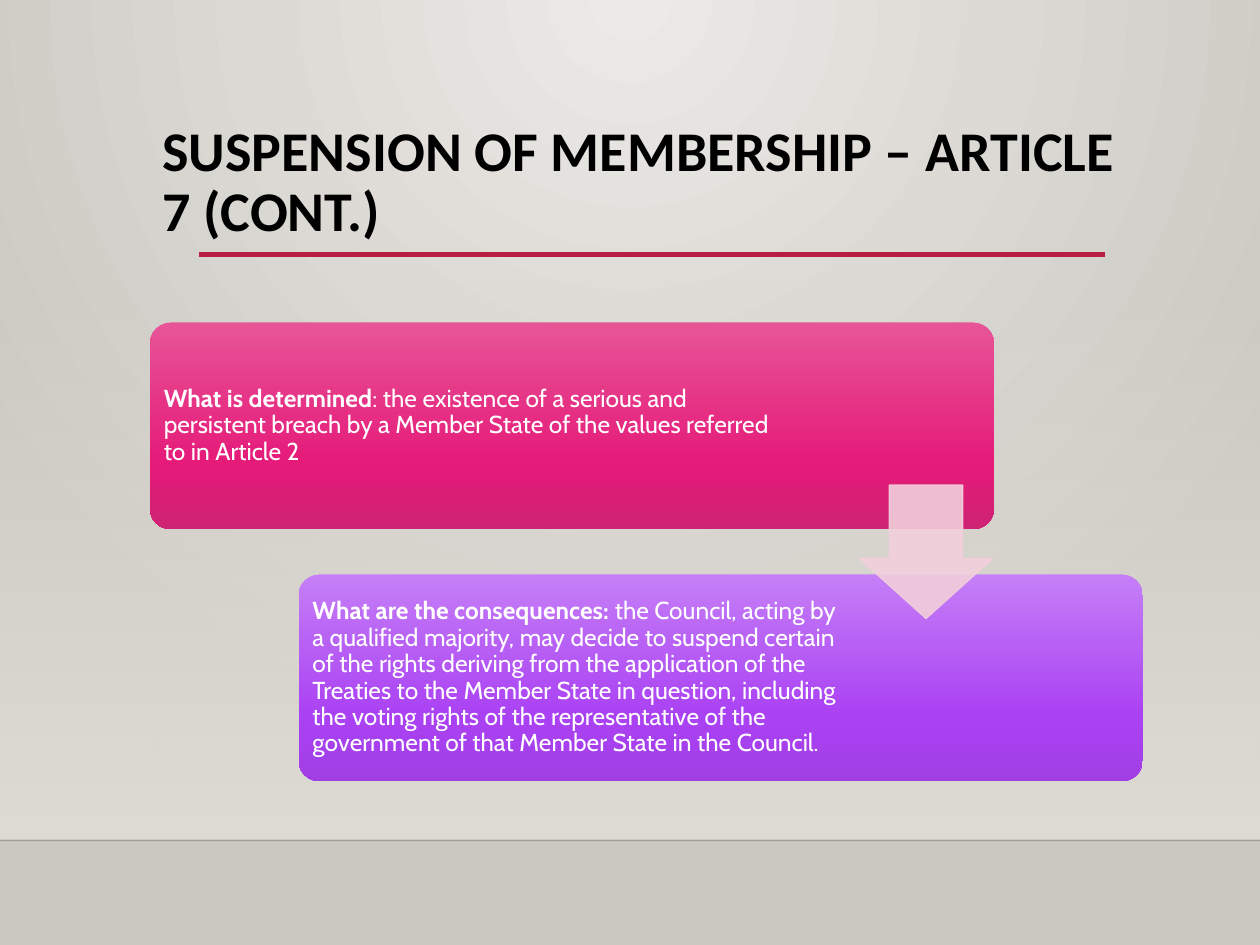
"""Build the slide on suspension of membership under Article 7."""
from lxml.etree import SubElement
from pptx import Presentation
from pptx.dml.color import RGBColor
from pptx.enum.shapes import MSO_CONNECTOR, MSO_SHAPE
from pptx.enum.text import MSO_ANCHOR
from pptx.oxml.ns import qn
from pptx.util import Inches, Pt

WHITE = RGBColor(0xFF, 0xFF, 0xFF)
BLACK = RGBColor(0x00, 0x00, 0x00)
CRIMSON = RGBColor(0xB7, 0x1E, 0x42)
BLUSH = RGBColor(0xF2, 0xCF, 0xDB)
SAND = RGBColor(0xDF, 0xDB, 0xD5)
LIGHT_GREY = RGBColor(0xEC, 0xEA, 0xE7)
MID_GREY = RGBColor(0xCA, 0xC7, 0xC1)
PINKS = [RGBColor(0xE7, 0x55, 0x97), RGBColor(0xE5, 0x1A, 0x79), RGBColor(0xCF, 0x23, 0x74)]
PURPLES = [RGBColor(0xC5, 0x7F, 0xF7), RGBColor(0xAA, 0x41, 0xF3), RGBColor(0xA1, 0x3F, 0xE5)]

TITLE = "SUSPENSION OF MEMBERSHIP – ARTICLE 7 (CONT.)"
STEPS = [
    {"heading": "What is determined",
     "detail": ": the existence of a serious and persistent breach by a Member State "
               "of the values referred to in Article 2",
     "shades": PINKS, "text_width": 5},
    {"heading": "What are the consequences: ",
     "detail": "the Council, acting by a qualified majority, may decide to suspend certain "
               "of the rights deriving from the application of the Treaties to the Member "
               "State in question, including the voting rights of the representative of "
               "the government of that Member State in the Council.",
     "shades": PURPLES, "text_width": 4.36},
]
RULES = [
    {"start": 0, "end": 10, "y": 6.67, "color": BLACK, "width": 1, "opacity": 20},
    {"start": 1.58, "end": 8.77, "y": 2.02, "color": CRIMSON, "width": 2.5, "opacity": 100},
]
TITLE_FORMAT = {"name": "Calibri", "size": Pt(32), "bold": True}
HEADING_FORMAT = {"name": "Cabin", "size": Pt(14), "bold": True}
DETAIL_FORMAT = {**HEADING_FORMAT, "bold": False}

LEFT, TOP = 1.19, 2.56
STEP_WIDTH, STEP_HEIGHT = 6.7, 1.64
SHIFT_X, SHIFT_Y = 1.18, 2
PADDING = 0.05


def set_opacity(root, percent):
    for color in root.iter(qn("a:srgbClr")):
        SubElement(color, qn("a:alpha"), val=str(percent * 1000))


def paint_gradient(fill, root, stops, focus=None):
    fill.gradient()
    gradient = next(root.iter(qn("a:gradFill")))
    for child in list(gradient):
        gradient.remove(child)
    stop_list = SubElement(gradient, qn("a:gsLst"))
    for position, color, opacity in stops:
        stop = SubElement(stop_list, qn("a:gs"), pos=str(position * 1000))
        set_opacity_target = SubElement(stop, qn("a:srgbClr"), val=str(color))
        set_opacity(set_opacity_target, opacity)
    if focus:
        direction = SubElement(gradient, qn("a:path"), path="circle")
        SubElement(direction, qn("a:fillToRect"),
                   {side: str(percent * 1000) for side, percent in focus.items()})
    else:
        SubElement(gradient, qn("a:lin"), ang="5400000", scaled="0")


def add_panel(slide, preset, box, adjustments=()):
    panel = slide.shapes.add_shape(preset, *map(Inches, box))
    panel.shadow.inherit = False
    panel.line.fill.background()
    for index, value in enumerate(adjustments):
        panel.adjustments[index] = value
    return panel


def add_rule(slide, start, end, y, color, width, opacity):
    rule = slide.shapes.add_connector(
        MSO_CONNECTOR.STRAIGHT, Inches(start), Inches(y), Inches(end), Inches(y))
    rule.line.color.rgb = color
    rule.line.width = Pt(width)
    properties = rule._element.spPr
    set_opacity(properties, opacity)
    SubElement(properties, qn("a:effectLst"))


def add_text(slide, box, runs, color, margin):
    frame = slide.shapes.add_textbox(*map(Inches, box)).text_frame
    settings = {"word_wrap": True, "vertical_anchor": MSO_ANCHOR.MIDDLE}
    settings.update({f"margin_{side}": Inches(margin)
                     for side in ("left", "top", "right", "bottom")})
    for key, value in settings.items():
        setattr(frame, key, value)
    paragraph = frame.paragraphs[0]
    paragraph.line_spacing = 0.9
    for words, font_format in runs:
        run = paragraph.add_run()
        run.text = words
        run.font.color.rgb = color
        for key, value in font_format.items():
            setattr(run.font, key, value)


def add_step(slide, index, step):
    left, top = LEFT + index * SHIFT_X, TOP + index * SHIFT_Y
    panel = add_panel(slide, MSO_SHAPE.ROUNDED_RECTANGLE,
                      (left, top, STEP_WIDTH, STEP_HEIGHT), [0.1])
    stops = [(position, color, 100) for position, color in zip((0, 69, 100), step["shades"])]
    paint_gradient(panel.fill, panel._element.spPr, stops)
    text_box = (left + PADDING, top + PADDING, step["text_width"], STEP_HEIGHT - 2 * PADDING)
    runs = [(step["heading"], HEADING_FORMAT), (step["detail"], DETAIL_FORMAT)]
    add_text(slide, text_box, runs, WHITE, 0.06)


def add_arrow(slide):
    arrow = add_panel(slide, MSO_SHAPE.DOWN_ARROW, (6.82, 3.85, 1.06, 1.06), [0.55, 0.45])
    arrow.fill.solid()
    arrow.fill.fore_color.rgb = BLUSH
    arrow.line.color.rgb = BLUSH
    arrow.line.width = Pt(0.75)
    set_opacity(arrow._element.spPr, 90)


def main():
    deck = Presentation()
    deck.slide_width, deck.slide_height = Inches(10), Inches(7.5)
    slide = deck.slides.add_slide(deck.slide_layouts[6])
    paint_gradient(slide.background.fill, slide._element,
                   [(0, LIGHT_GREY, 100), (100, MID_GREY, 100)],
                   {"l": 43, "t": 0, "r": 43, "b": 100})
    wall = add_panel(slide, MSO_SHAPE.RECTANGLE, (0, 2.2, 10, 4.46))
    paint_gradient(wall.fill, wall._element.spPr, [(0, SAND, 0), (100, SAND, 100)])
    for rule in RULES:
        add_rule(slide, **rule)
    add_text(slide, (LEFT, 0.88, 7.88, 1.15), [(TITLE, TITLE_FORMAT)], BLACK, 0.1)
    for index, step in enumerate(STEPS):
        add_step(slide, index, step)
    add_arrow(slide)
    deck.save("out.pptx")


if __name__ == "__main__":
    main()
